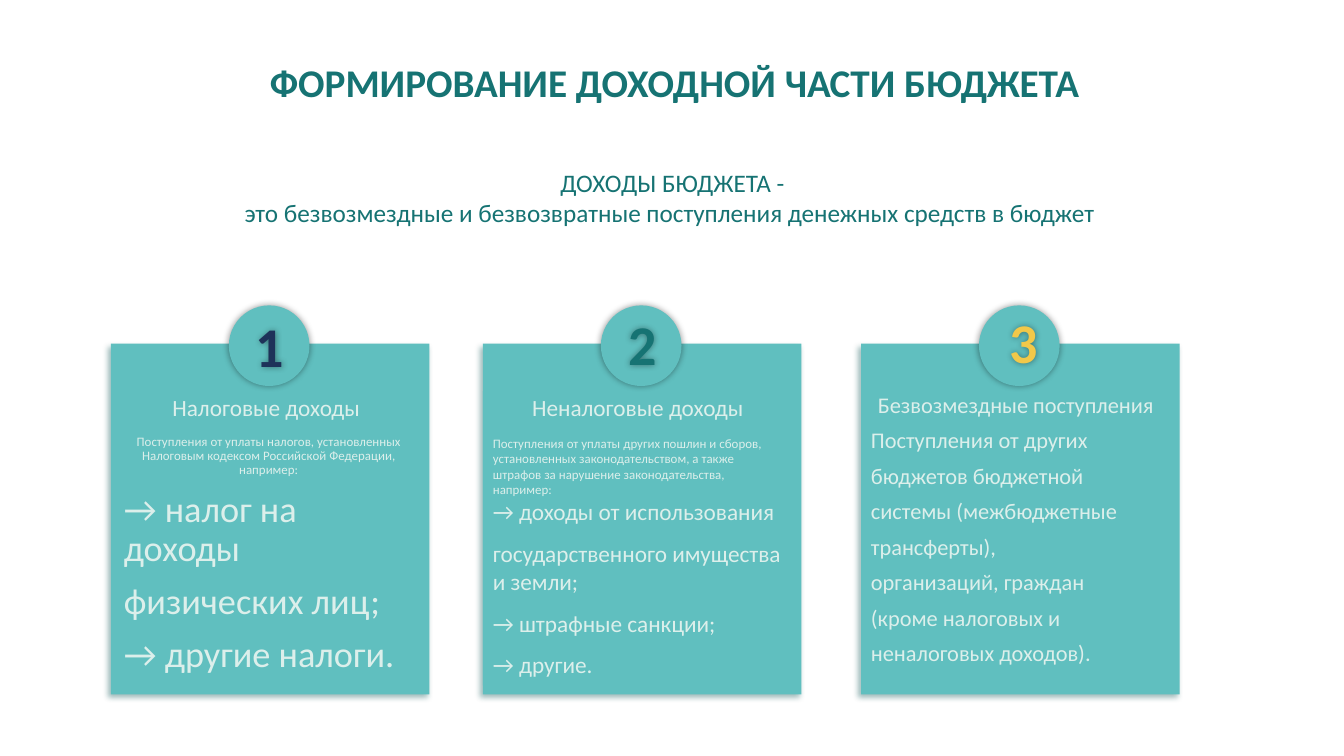
import pptx
import pptx.util
import pptx.dml.color
import pptx.enum.shapes
import pptx.enum.text
import pptx.oxml
import pptx.oxml.ns

Inches, Pt = pptx.util.Inches, pptx.util.Pt
SHAPE = pptx.enum.shapes.MSO_SHAPE
ALIGN = pptx.enum.text.PP_ALIGN
ANCHOR = pptx.enum.text.MSO_ANCHOR

COLORS = {
    "heading": "167373",
    "card": "60BFBF",
    "card_text": "DCEFEB",
    "card_shadow": "105656",
    "badge_shadow": "000000",
    "navy": "1E3259",
    "yellow": "F2C849",
}
CARD_TOP, CARD_WIDTH, CARD_HEIGHT = 3.41, 3.16, 3.48
BADGE_SIZE = 0.8

# Each card: left edge, body inset, digit, digit colour, digit offset from the
# badge, line spacing, and paragraphs as (text, size, centred, space before)
CARDS = [
    (1.1, 0.03, "1", "navy", (0.01, 0.01), 0.9, [
        ("Налоговые доходы ", 16.6, True, 0),
        ("Поступления от уплаты налогов, установленных Налоговым кодексом "
         "Российской Федерации, например:", 9.2, True, 10),
        ("→ налог на доходы", 25.9, False, 10),
        ("физических лиц;", 25.9, False, 10),
        ("→ другие налоги.", 25.9, False, 10),
    ]),
    (4.79, 0, "2", "heading", (0.01, -0.01), 1.0, [
        ("Неналоговые доходы", 16.6, True, 0),
        ("Поступления от уплаты других пошлин и сборов, установленных "
         "законодательством, а также штрафов за нарушение законодательства, "
         "например:", 9.2, False, 10),
        ("→ доходы от использования", 16.6, False, 0),
        ("государственного имущества и земли;", 16.6, False, 10),
        ("→ штрафные санкции;", 16.6, False, 10),
        ("→ другие.", 16.6, False, 10),
    ]),
    (8.54, 0, "3", "yellow", (0.04, -0.03), 0.8, [
        ("Безвозмездные поступления", 16, True, 0),
        ("Поступления от других", 16, False, 10),
        ("бюджетов бюджетной", 16, False, 10),
        ("системы (межбюджетные", 16, False, 10),
        ("трансферты),", 16, False, 10),
        ("организаций, граждан", 16, False, 10),
        ("(кроме налоговых и", 16, False, 10),
        ("неналоговых доходов).", 16, False, 10),
    ]),
]


def rgb(name):
    return pptx.dml.color.RGBColor.from_string(COLORS[name])


def add_shadow(shape, color, blur, distance, angle):
    shape.shadow.inherit = False
    effects = shape._element.spPr.find(pptx.oxml.ns.qn("a:effectLst"))
    effects.append(pptx.oxml.parse_xml(
        f'<a:outerShdw {pptx.oxml.ns.nsdecls("a")} blurRad="{Pt(blur)}" '
        f'dist="{Pt(distance)}" dir="{angle * 60000}" algn="ctr" '
        f'rotWithShape="0"><a:srgbClr val="{COLORS[color]}">'
        '<a:alpha val="40000"/></a:srgbClr></a:outerShdw>'))


def add_block(slide, kind, left, top, width, height):
    block = slide.shapes.add_shape(
        kind, Inches(left), Inches(top), Inches(width), Inches(height))
    block.shadow.inherit = False
    block.fill.solid()
    block.fill.fore_color.rgb = rgb("card")
    block.line.fill.background()
    return block


def style(paragraph, size, color, centred=True, bold=False, spacing=1.0, before=0):
    paragraph.alignment = ALIGN.CENTER if centred else ALIGN.LEFT
    paragraph.line_spacing = spacing
    paragraph.space_before = Pt(before)
    paragraph.font.name = "Calibri"
    paragraph.font.size = Pt(size)
    paragraph.font.bold = bold
    paragraph.font.color.rgb = rgb(color)


def add_text(slide, left, top, width, height, lines, size, color, **options):
    box = slide.shapes.add_textbox(
        Inches(left), Inches(top), Inches(width), Inches(height))
    box.text_frame.word_wrap = True
    box.text_frame.text = "\n".join(lines)
    for paragraph in box.text_frame.paragraphs:
        style(paragraph, size, color, **options)
    return box


def add_heading(slide, left, top, width, height):
    title = add_text(slide, left, top, width, height,
                     ["ФОРМИРОВАНИЕ ДОХОДНОЙ ЧАСТИ БЮДЖЕТА"],
                     28, "heading", bold=True, spacing=0.9)
    title.text_frame.vertical_anchor = ANCHOR.MIDDLE


def add_definition(slide, left, top, width, height):
    add_text(slide, left, top, width, height,
             ["ДОХОДЫ БЮДЖЕТА -",
              "это безвозмездные и безвозвратные поступления денежных "
              "средств в бюджет "], 18, "heading")


def add_card(slide, left, top, width, height, card):
    inset, digit, digit_color, (shift_x, shift_y), spacing, entries = card

    # Card background
    background = add_block(slide, SHAPE.RECTANGLE, left, top, width, height)
    add_shadow(background, "card_shadow", 4, 3, 135)

    # Card wording
    body = add_block(slide, SHAPE.RECTANGLE, left + inset, top + 0.47,
                     width - 0.09, height - 0.56)
    frame = body.text_frame
    frame.word_wrap = True
    frame.vertical_anchor = ANCHOR.TOP
    frame.text = "\n".join(entry[0] for entry in entries)
    for paragraph, (_, size, centred, before) in zip(frame.paragraphs, entries):
        style(paragraph, size, "card_text", centred, before=before,
              spacing=0.9 if paragraph.text == "Неналоговые доходы" else spacing)

    # Numbered badge on the top edge
    badge_left, badge_top = left + 1.17, top - 0.38
    badge = add_block(slide, SHAPE.OVAL, badge_left, badge_top,
                      BADGE_SIZE, BADGE_SIZE)
    add_shadow(badge, "badge_shadow", 5, 0, 0)
    number = add_text(slide, badge_left + shift_x, badge_top + shift_y,
                      BADGE_SIZE, 0.77, [digit], 40, digit_color, bold=True)
    add_shadow(number, "badge_shadow", 5, 0, 0)


def main():
    deck = pptx.Presentation()
    deck.slide_width, deck.slide_height = Inches(13.33), Inches(7.5)
    slide = deck.slides.add_slide(deck.slide_layouts[6])
    add_heading(slide, 0.81, 0.5, 11.76, 0.69)
    add_definition(slide, 0.37, 1.61, 12.6, 1.01)
    for left, *card in CARDS:
        add_card(slide, left, CARD_TOP, CARD_WIDTH, CARD_HEIGHT, card)
    deck.save("out.pptx")


if __name__ == "__main__":
    main()
